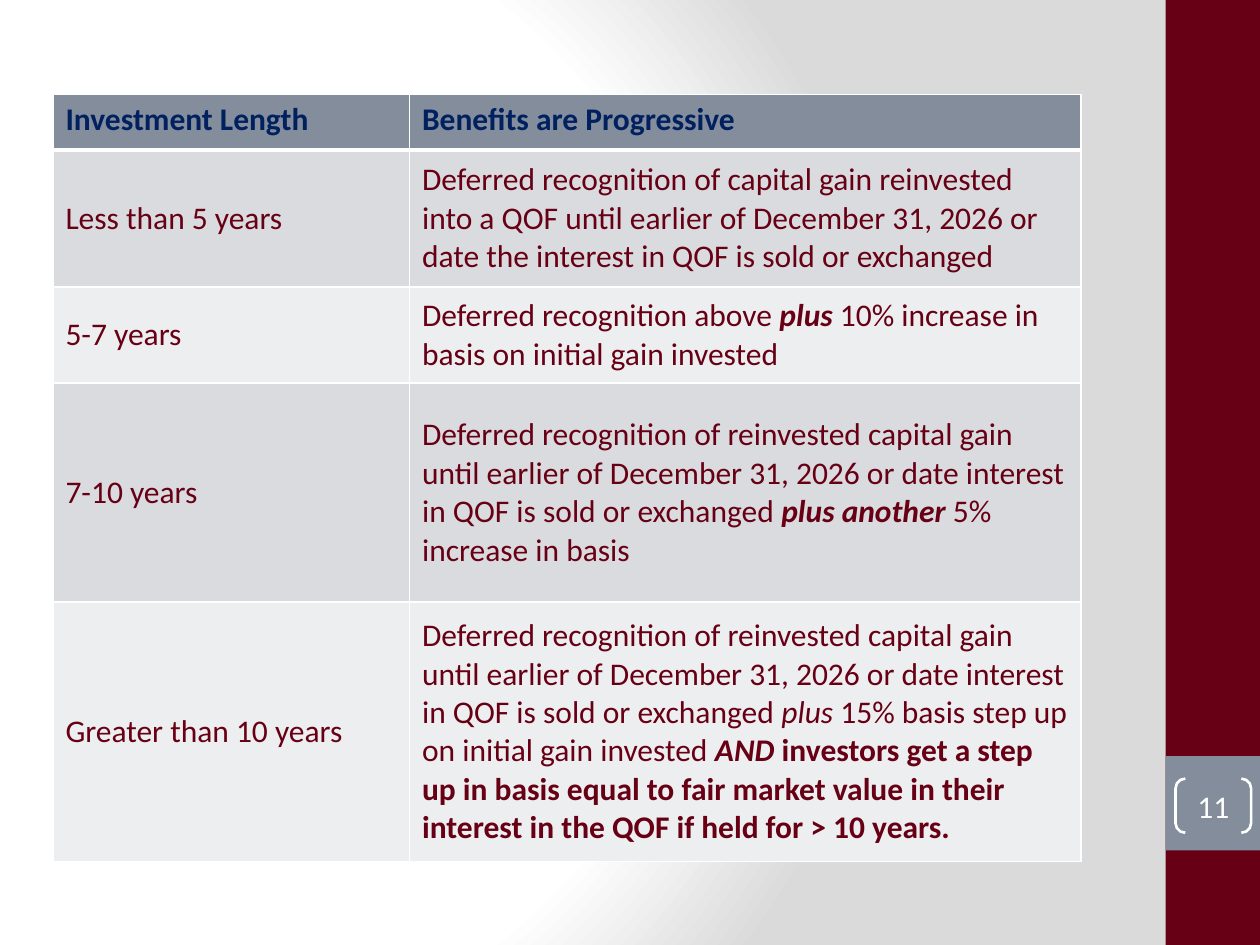
from lxml.etree import SubElement
from pptx import Presentation
from pptx.dml.color import RGBColor
from pptx.enum.shapes import MSO_SHAPE
from pptx.enum.text import MSO_ANCHOR, PP_ALIGN
from pptx.oxml import parse_xml
from pptx.oxml.ns import nsdecls, qn
from pptx.util import Inches, Pt

MAROON, SLATE, NAVY, WHITE = "680015", "838D9B", "002060", "FFFFFF"
BANDS = ["D9DBDE", "EDEEEF"]
WIDTHS = [2.83, 5.33]
HEIGHTS = [0.44, 1.09, 0.76, 1.74, 2.06]

HEADS = ["Investment Length", "Benefits are Progressive"]
GAIN = ("Deferred recognition of reinvested capital gain until earlier of "
        "December 31, 2026 or date interest in QOF is sold or exchanged ")
# Each benefit is a list of (text, style) runs; style holds b and/or i.
TERMS = [
    ("Less than 5 years", [
        ("Deferred recognition of capital gain reinvested into a QOF until "
         "earlier of December 31, 2026 or date the interest in QOF is sold "
         "or exchanged", "")]),
    ("5-7 years", [
        ("Deferred recognition above ", ""), ("plus", "bi"),
        (" 10% increase in basis on initial gain invested", "")]),
    ("7-10 years", [
        (GAIN, ""), ("plus another ", "bi"), ("5% increase in basis", "")]),
    ("Greater than 10 years", [
        (GAIN, ""), ("plus ", "i"),
        ("15% basis step up on initial gain invested ", ""), ("AND ", "bi"),
        ("investors get a step up in basis equal to fair market value in "
         "their interest in the QOF if held for > 10 years.", "b")]),
]


def color(code):
    return RGBColor.from_string(code)


def paint(item, code):
    item.fill.solid()
    item.fill.fore_color.rgb = color(code)


def write(para, runs, code):
    for text, style in runs:
        run = para.add_run()
        run.text = text
        look = {"name": "Calibri", "size": Pt(18),
                "bold": "b" in style, "italic": "i" in style}
        for key, value in look.items():
            setattr(run.font, key, value)
        run.font.color.rgb = color(code)


def set_back(slide):
    """Give the slide a round white-to-grey gradient."""
    slide.background.fill.solid()
    plain = next(slide.element.iter(qn("a:solidFill")))
    stops = "".join(
        f'<a:gs pos="{pos}000"><a:srgbClr val="{code}"/></a:gs>'
        for pos, code in [(0, WHITE), (75, WHITE), (100, "DADADA")])
    grad = parse_xml(
        f'<a:gradFill {nsdecls("a")} rotWithShape="1"><a:gsLst>{stops}</a:gsLst>'
        '<a:path path="circle"><a:fillToRect l="20000" t="50000" '
        'r="100000" b="50000"/></a:path></a:gradFill>')
    plain.getparent().replace(plain, grad)


def add_shape(slide, kind, box):
    shape = slide.shapes.add_shape(kind, *map(Inches, box))
    shape.shadow.inherit = False
    return shape


def add_block(slide, box, code):
    block = add_shape(slide, MSO_SHAPE.RECTANGLE, box)
    paint(block, code)
    block.line.fill.background()


def add_badge(slide, box, text):
    badge = add_shape(slide, MSO_SHAPE.DOUBLE_BRACKET, box)
    badge.adjustments[0] = 0.18
    badge.fill.background()
    badge.line.color.rgb = color(WHITE)
    badge.line.width = Pt(1.5)
    frame = badge.text_frame
    for side in ("left", "top", "right", "bottom"):
        setattr(frame, f"margin_{side}", 0)
    frame.vertical_anchor = MSO_ANCHOR.MIDDLE
    frame.paragraphs[0].alignment = PP_ALIGN.CENTER
    write(frame.paragraphs[0], [(text, "")], WHITE)


def set_edges(cell, top, bottom):
    """Draw white cell borders; top and bottom are widths in points."""
    props = cell._tc.get_or_add_tcPr()
    for side, width in {"L": 1, "R": 1, "T": top, "B": bottom}.items():
        line = SubElement(props, qn(f"a:ln{side}"), w=str(Pt(width)))
        fill = SubElement(line, qn("a:solidFill"))
        SubElement(fill, qn("a:srgbClr"), val=WHITE)


def fill_cell(cell, runs, row):
    head = row == 0
    set_edges(cell, 3 if row == 1 else 1, 3 if head else 1)
    paint(cell, SLATE if head else BANDS[(row - 1) % 2])
    cell.vertical_anchor = MSO_ANCHOR.TOP if head else MSO_ANCHOR.MIDDLE
    write(cell.text_frame.paragraphs[0], runs, NAVY if head else MAROON)


def add_terms(slide, left, top):
    rows = [[[(text, "b")] for text in HEADS]]
    rows += [[[(term, "")], gains] for term, gains in TERMS]
    box = (left, top, sum(WIDTHS), sum(HEIGHTS))
    table = slide.shapes.add_table(
        len(rows), len(WIDTHS), *map(Inches, box)).table
    for col, width in zip(table.columns, WIDTHS):
        col.width = Inches(width)
    for row, height in zip(table.rows, HEIGHTS):
        row.height = Inches(height)
    for r, cells in enumerate(rows):
        for c, runs in enumerate(cells):
            fill_cell(table.cell(r, c), runs, r)


def main():
    deck = Presentation()
    deck.slide_width, deck.slide_height = Inches(10), Inches(7.5)
    slide = deck.slides.add_slide(deck.slide_layouts[6])
    set_back(slide)
    add_block(slide, (9.25, 0, 0.75, 7.5), MAROON)
    add_block(slide, (9.25, 6, 0.75, 0.75), SLATE)
    add_terms(slide, 0.42, 0.75)
    add_badge(slide, (9.33, 6.18, 0.6, 0.43), "11")
    deck.save("out.pptx")


if __name__ == "__main__":
    main()
